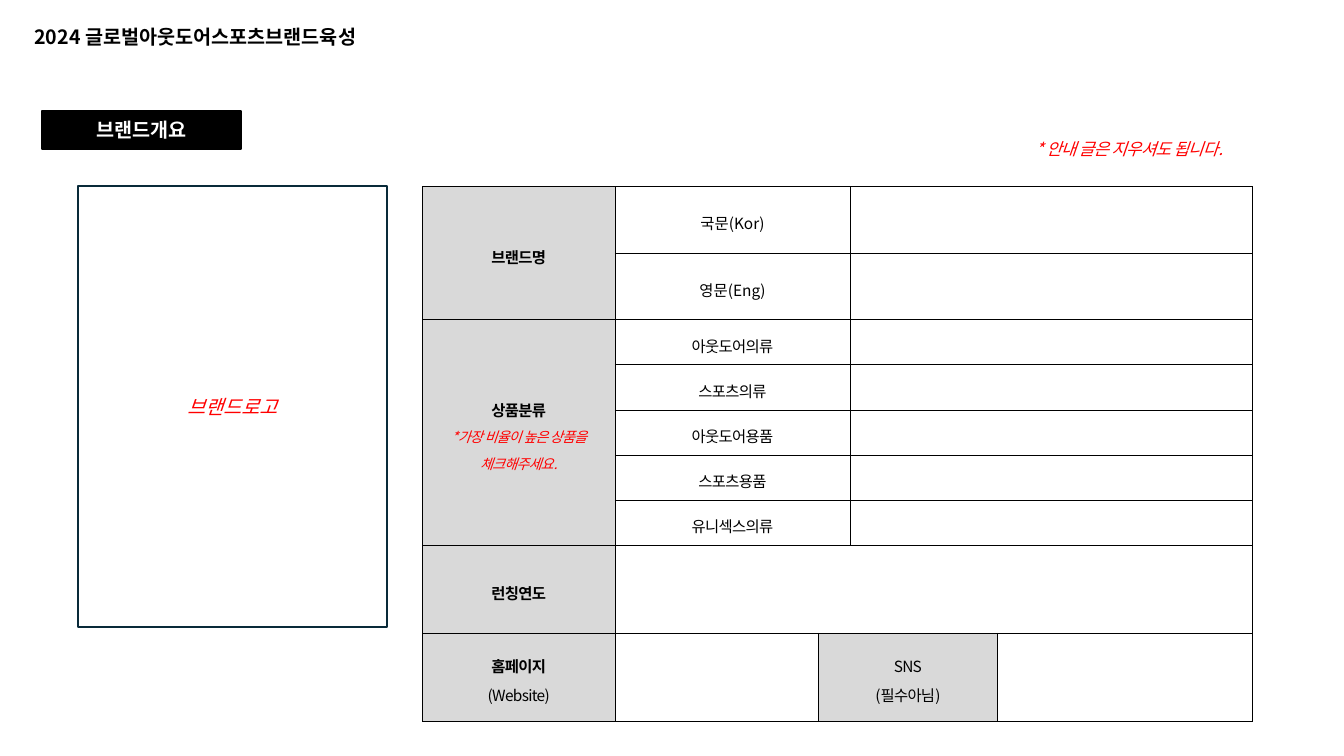
from lxml import etree
from pptx import Presentation
from pptx.dml.color import RGBColor
from pptx.enum.shapes import MSO_SHAPE
from pptx.enum.text import MSO_ANCHOR, MSO_AUTO_SIZE, PP_ALIGN
from pptx.oxml.ns import qn
from pptx.util import Inches, Pt

RECT = MSO_SHAPE.RECTANGLE
LEFT, CENTER = PP_ALIGN.LEFT, PP_ALIGN.CENTER
TOP, MIDDLE = MSO_ANCHOR.TOP, MSO_ANCHOR.MIDDLE
FONT = "Noto Sans CJK KR"
BLACK, WHITE, RED, GRAY, NAVY = "000000", "FFFFFF", "FF0000", "D9D9D9", "092A39"

COLS = [1.91, 2.02, 0.31, 1.46, 2.53]
ROWS = [0.66, 0.66, 0.39, 0.4, 0.41, 0.41, 0.4, 0.87, 0.88]
LABELS = ["국문(Kor)", "영문(Eng)", "아웃도어의류", "스포츠의류",
          "아웃도어용품", "스포츠용품", "유니섹스의류"]
NAMES = 2  # rows for the brand name; the other labels are product types
YEAR, SITE = len(LABELS), len(LABELS) + 1

HEAD = dict(size=11, bold=True, track=-0.5)
BODY = dict(size=11, track=-0.5)
HINT = dict(size=10, color=RED, italic=True, track=-0.5)


def paint(value):
    return RGBColor.from_string(value)


def add_run(para, text, size, color=BLACK, bold=False, italic=False, track=0):
    """Add one run; track is the letter spacing in points."""
    run = para.add_run()
    run.text = text
    font = run.font
    font.size, font.bold, font.italic = Pt(size), bold, italic
    font.color.rgb = paint(color)
    font.name = FONT
    props = run._r.get_or_add_rPr()
    etree.SubElement(props, qn("a:ea")).set("typeface", FONT)
    if track:
        props.set("spc", str(int(track * 100)))


def write(frame, lines, align=CENTER, anchor=MIDDLE, lead=None):
    """Fill a frame with (text, style) lines."""
    frame.word_wrap = True
    frame.vertical_anchor = anchor
    for i, (text, style) in enumerate(lines):
        para = frame.add_paragraph() if i else frame.paragraphs[0]
        para.alignment = align
        if lead:
            para.line_spacing = lead
        add_run(para, text, **style)


def add_title(slide, box):
    title = slide.shapes.title
    title.left, title.top, title.width, title.height = map(Inches, box)
    write(title.text_frame, [("2024 글로벌아웃도어스포츠브랜드육성",
                              dict(size=14, bold=True))], LEFT, TOP)
    title.text_frame.auto_size = MSO_AUTO_SIZE.NONE
    title.text_frame.paragraphs[0].line_spacing = 1.0


def add_box(slide, box, text, style, line, fill=None):
    shape = slide.shapes.add_shape(RECT, *map(Inches, box))
    shape.shadow.inherit = False
    if fill:
        shape.fill.solid()
        shape.fill.fore_color.rgb = paint(fill)
    else:
        shape.fill.background()
    shape.line.color.rgb = paint(line)
    shape.line.width = Pt(1.5)
    write(shape.text_frame, [(text, style)])


def add_note(slide, box):
    note = slide.shapes.add_textbox(*map(Inches, box))
    style = dict(size=12, color=RED, italic=True, track=-0.5)
    write(note.text_frame, [("* 안내 글은 지우셔도 됩니다.", style)],
          anchor=TOP, lead=1.3)


def style_cell(cell):
    """Give a cell thin black borders, no fill and a small empty line."""
    props = cell._tc.get_or_add_tcPr()
    for side in ("lnL", "lnR", "lnT", "lnB"):
        edge = etree.SubElement(props, qn("a:" + side), w=str(Pt(0.28)))
        fill = etree.SubElement(edge, qn("a:solidFill"))
        etree.SubElement(fill, qn("a:srgbClr"), val=BLACK)
    cell.fill.background()
    cell.margin_left = cell.margin_right = Inches(0.1)
    cell.margin_top = cell.margin_bottom = Inches(0.08)
    cell.vertical_anchor = MIDDLE
    para = cell.text_frame.paragraphs[0]._p
    etree.SubElement(para, qn("a:endParaRPr"), sz="1100")


def fill_cell(cell, lines, shade=False):
    if shade:
        cell.fill.solid()
        cell.fill.fore_color.rgb = paint(GRAY)
    write(cell.text_frame, lines, lead=1.3)
    cell.vertical_anchor = MIDDLE


def add_form(slide, left, top):
    frame = slide.shapes.add_table(len(ROWS), len(COLS), Inches(left), Inches(top),
                                   Inches(sum(COLS)), Inches(sum(ROWS)))
    table = frame.table
    table.first_row = table.horz_banding = False
    for col, width in zip(table.columns, COLS):
        col.width = Inches(width)
    for row, height in zip(table.rows, ROWS):
        row.height = Inches(height)
    for cell in table.iter_cells():
        style_cell(cell)

    def merge(row, col, last_row, last_col):
        table.cell(row, col).merge(table.cell(last_row, last_col))

    merge(0, 0, NAMES - 1, 0)
    merge(NAMES, 0, YEAR - 1, 0)
    merge(YEAR, 1, YEAR, 4)
    merge(SITE, 2, SITE, 3)
    for i, label in enumerate(LABELS):
        merge(i, 1, i, 2)
        merge(i, 3, i, 4)
        style = dict(size=11) if i < NAMES else BODY
        fill_cell(table.cell(i, 1), [(label, style)])

    heads = [
        (0, 0, [("브랜드명", HEAD)]),
        (NAMES, 0, [("상품분류", HEAD),
                    ("*가장 비율이 높은 상품을 체크해주세요.", HINT)]),
        (YEAR, 0, [("런칭연도", HEAD)]),
        (SITE, 0, [("홈페이지", HEAD), ("(Website)", BODY)]),
        (SITE, 2, [("SNS", BODY), ("(필수아님)", BODY)]),
    ]
    for row, col, lines in heads:
        fill_cell(table.cell(row, col), lines, shade=True)


def main():
    deck = Presentation()
    deck.slide_width, deck.slide_height = Inches(13.33), Inches(7.5)
    slide = deck.slides.add_slide(deck.slide_layouts[5])
    add_title(slide, (0.24, 0.2, 4.62, 0.34))
    add_form(slide, 4.19, 1.85)
    add_box(slide, (0.77, 1.85, 3.07, 4.37), "브랜드로고",
            dict(size=14, color=RED, italic=True), NAVY)
    add_box(slide, (0.42, 1.1, 1.97, 0.38), "브랜드개요",
            dict(size=14, color=WHITE, bold=True), BLACK, BLACK)
    add_note(slide, (8.75, 1.27, 4.9, 0.33))
    deck.save("out.pptx")


if __name__ == "__main__":
    main()
